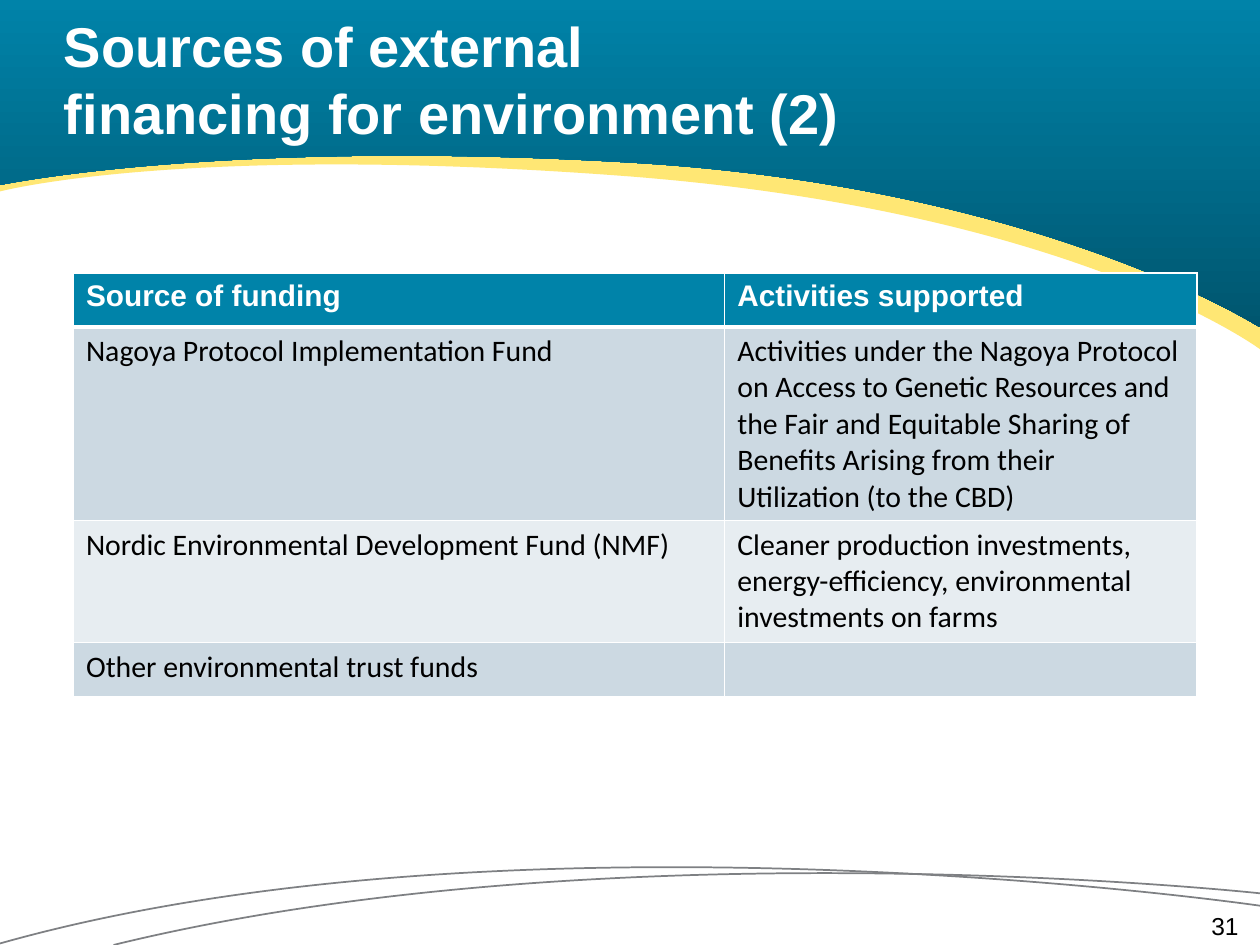
from lxml.etree import SubElement
from pptx import Presentation
from pptx.dml.color import RGBColor
from pptx.enum.text import MSO_ANCHOR, PP_ALIGN
from pptx.oxml.ns import qn
from pptx.util import Cm, Pt

WHITE, BLACK, TEAL, DEEP_TEAL = "FFFFFF", "000000", "0083A9", "00566F"
YELLOW, GREY, ROW_DARK, ROW_LIGHT = "FFE774", "7E8083", "CCD9E2", "E7EDF1"

# Row height in cm, source, activities
FUNDING = [
    (1.09, "Source of funding", "Activities supported"),
    (3.9, "Nagoya Protocol Implementation Fund",
     "Activities under the Nagoya Protocol on Access to Genetic Resources and "
     "the Fair and Equitable Sharing of Benefits Arising from their Utilization "
     "(to the CBD)"),
    (2.46, "Nordic Environmental Development Fund (NMF)",
     "Cleaner production investments, energy-efficiency, environmental "
     "investments on farms"),
    (1.09, "Other environmental trust funds", ""),
]


def color(hex_value):
    return RGBColor.from_string(hex_value)


def add_outline(slide, left, top, start, curve_points, corners=()):
    """Cubic curves (three points each) from start, then straight lines to the corners."""
    placed = [(Cm(left + x), Cm(top + y)) for x, y in (start, *curve_points, *corners)]
    builder = slide.shapes.build_freeform(*placed[0], scale=1.0)
    builder.add_line_segments(placed[1:], close=bool(corners))
    outline = builder.convert_to_shape()
    outline.shadow.inherit = False

    # Join each three line segments into one cubic curve
    segments = list(outline._element.iter(qn("a:lnTo")))[:len(curve_points)]
    for first in range(0, len(segments), 3):
        cubic, *others = segments[first:first + 3]
        cubic.tag = qn("a:cubicBezTo")
        for segment in others:
            cubic.append(segment[0])
            segment.getparent().remove(segment)
    return outline


def format_text(paragraph, **values):
    for name, value in values.items():
        if name == "color":
            paragraph.font.color.rgb = color(value)
        else:
            setattr(paragraph.font, name, value)


def add_text(slide, box, text, anchor, align, **values):
    frame = slide.shapes.add_textbox(*map(Cm, box)).text_frame
    for name, value in {"margin_left": 0, "margin_top": 0, "margin_right": 0,
                        "margin_bottom": 0, "word_wrap": True,
                        "vertical_anchor": anchor}.items():
        setattr(frame, name, value)
    paragraph = frame.paragraphs[0]
    paragraph.text = text
    paragraph.alignment = align
    format_text(paragraph, name="Arial", **values)


def add_header(slide, left, top, width):
    # Yellow edge behind, teal band in front: right end, control, crest, control, left end
    waves = [
        (7.07, (21.69, 4.3), (12.73, 3.59), (3.73, 2.9), 3.89),
        (6.63, (20.98, 3.79), (12.73, 3.31), (4.45, 2.82), 3.76),
    ]
    bands = []
    for right_y, control_1, crest, control_2, left_y in waves:
        right_end, left_end = (width, right_y), (0, left_y)
        band = add_outline(slide, left, top, right_end,
                           [right_end, control_1, crest, control_2, left_end, left_end],
                           [(0, 0), (width, 0)])
        band.line.fill.background()
        bands.append(band)
    edge, teal_band = bands
    edge.fill.solid()
    edge.fill.fore_color.rgb = color(YELLOW)
    teal_band.fill.gradient()
    teal_band.fill.gradient_angle = 270
    for stop, shade, position in zip(teal_band.fill.gradient_stops, (TEAL, DEEP_TEAL), (0, 1)):
        stop.color.rgb = color(shade)
        stop.position = position

    # Title
    add_text(slide, (left + 1.29, top + 0.03, 23.7, 3.18),
             "Sources of external \vfinancing for environment (2)",
             MSO_ANCHOR.MIDDLE, PP_ALIGN.LEFT, size=Pt(32), bold=True, color=WHITE)


def add_footer(slide, left, top, width):
    # Two thin arcs
    for right_y, control, left_end in [(1.93, (12.32, 0.51), (2.29, 2.97)),
                                       (2.18, (10.41, 0), (0, 2.94))]:
        right_end = (width, right_y)
        arc = add_outline(slide, left, top, right_end, [right_end, control, left_end])
        arc.fill.background()
        arc.line.color.rgb = color(GREY)
        arc.line.width = Pt(1)

    # Slide number
    add_text(slide, (left + 19.05, top + 2.28, 5.92, 0.46), "31",
             MSO_ANCHOR.TOP, PP_ALIGN.RIGHT, size=Pt(14), color=BLACK)


def set_borders(cell, bottom_width):
    properties = cell._tc.get_or_add_tcPr()
    for side, width in {"lnL": 1, "lnR": 1, "lnT": 1, "lnB": bottom_width}.items():
        border = SubElement(properties, qn(f"a:{side}"), w=str(Pt(width)))
        SubElement(SubElement(border, qn("a:solidFill")), qn("a:srgbClr"), val=WHITE)


def add_funding_table(slide, left, top, width, height):
    table = slide.shapes.add_table(len(FUNDING), 2, Cm(left), Cm(top),
                                   Cm(width), Cm(height)).table
    source_width = 13.13
    for column, column_width in zip(table.columns, (source_width, width - source_width)):
        column.width = Cm(column_width)
    for row_index, (row, (row_height, *texts)) in enumerate(zip(table.rows, FUNDING)):
        row.height = Cm(row_height)
        header = row_index == 0
        fill = TEAL if header else (ROW_DARK if row_index % 2 else ROW_LIGHT)
        for cell, text in zip(row.cells, texts):
            set_borders(cell, 3 if header else 1)
            cell.fill.solid()
            cell.fill.fore_color.rgb = color(fill)
            cell.margin_right = Cm(0.3)
            cell.text = text
            format_text(cell.text_frame.paragraphs[0], size=Pt(17), bold=header,
                        name="Arial" if header else "Calibri",
                        color=WHITE if header else BLACK)


def main():
    presentation = Presentation()
    presentation.slide_width, presentation.slide_height = Cm(25.4), Cm(19.05)
    slide = presentation.slides.add_slide(presentation.slide_layouts[6])
    add_footer(slide, 0, 16.08, 25.4)
    add_header(slide, 0, -0.03, 25.4)
    add_funding_table(slide, 1.48, 5.5, 22.65, 8.54)
    presentation.save("out.pptx")


if __name__ == "__main__":
    main()
